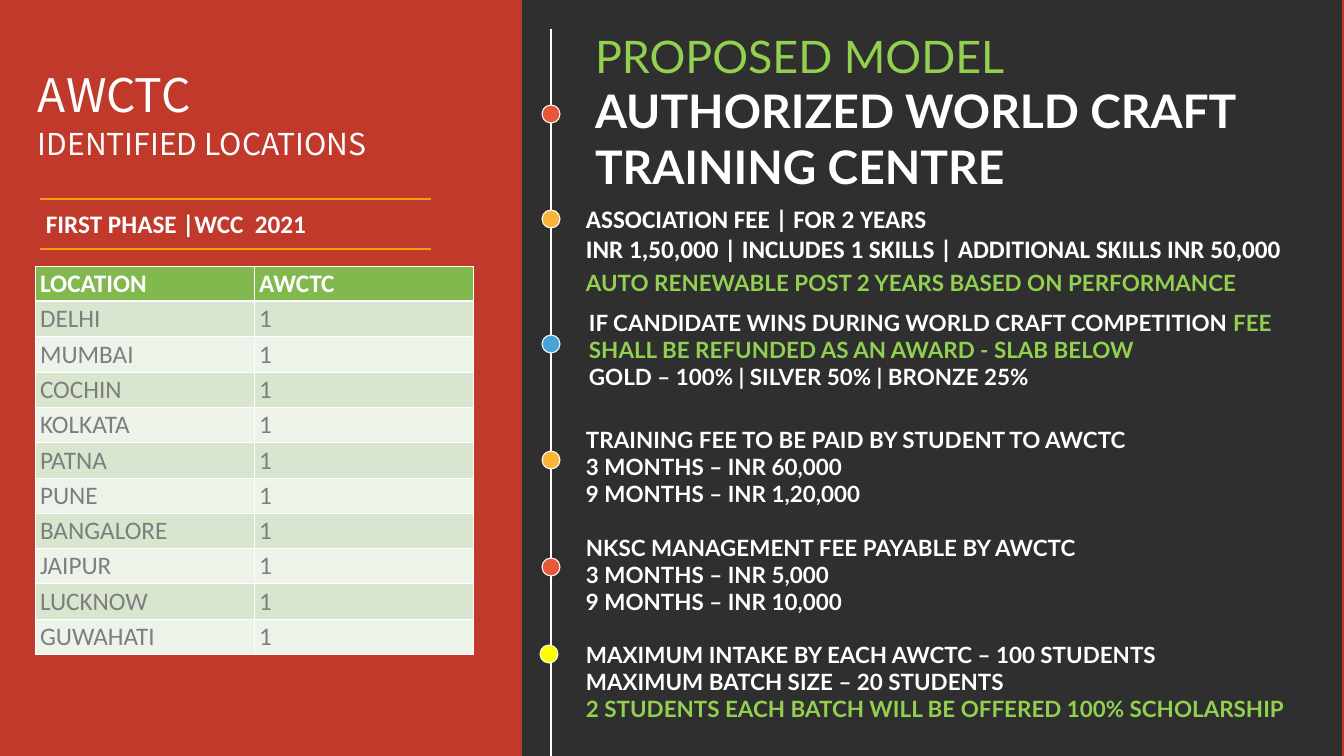
from pptx import Presentation
from pptx.dml.color import RGBColor
from pptx.enum.shapes import MSO_CONNECTOR, MSO_SHAPE
from pptx.enum.text import MSO_ANCHOR, MSO_AUTO_SIZE, PP_ALIGN
from pptx.oxml.ns import qn
from pptx.util import Pt
from lxml.etree import SubElement

THEME = {
    "dark": "2F2F2F", "red": "C0392B", "white": "FFFFFF", "green": "92D050",
    "gold": "F39C12", "blue": "46A4DB", "coral": "E5583A", "amber": "F9B439",
    "yellow": "FFFF00", "header": "81B94F", "band1": "D8E6D0", "band2": "EDF3E9",
    "grey": "7E7E7E",
    "lato": "Lato", "calibri": "Calibri", "noto": "Noto Sans CJK SC",
    "headline": 66, "model": 64, "subtitle": 43, "label": 36, "body": 32,
    "block_gap": 38.4,
}

# Each paragraph is a list of (text, colour) runs.
MODEL = [("PROPOSED MODEL", "green")]
CENTRE = [("AUTHORIZED WORLD CRAFT TRAINING CENTRE", "white")]
ASSOCIATION = [
    [("ASSOCIATION FEE | FOR 2 YEARS", "white")],
    [("INR 1,50,000 | INCLUDES 1 SKILLS | ADDITIONAL SKILLS INR 50,000", "white")],
]
RENEWAL = [[("AUTO RENEWABLE POST 2 YEARS BASED ON PERFORMANCE", "green")]]
REFUND = [
    [("IF CANDIDATE WINS DURING WORLD CRAFT COMPETITION ", "white"),
     ("FEE SHALL BE REFUNDED AS AN AWARD - SLAB BELOW", "green")],
    [("GOLD – 100% | SILVER 50% | BRONZE 25%", "white")],
]
FEE_BLOCKS = [
    [[("TRAINING FEE TO BE PAID BY STUDENT TO AWCTC", "white")],
     [("3 MONTHS – INR 60,000", "white")],
     [("9 MONTHS – INR 1,20,000", "white")]],
    [[("NKSC MANAGEMENT FEE PAYABLE BY AWCTC", "white")],
     [("3 MONTHS – INR 5,000", "white")],
     [("9 MONTHS – INR 10,000", "white")]],
    [[("MAXIMUM INTAKE BY EACH AWCTC – 100 STUDENTS", "white")],
     [("MAXIMUM BATCH SIZE – 20 STUDENTS", "white")],
     [("2 STUDENTS EACH BATCH WILL BE OFFERED 100% SCHOLARSHIP", "green")]],
]
# box, font, size, bold, paragraphs
TEXTS = [
    ((33, 64, 369, 61), "noto", "headline", False, [[("AWCTC", "white")]]),
    ((33, 123, 369, 41), "noto", "subtitle", False,
     [[("IDENTIFIED LOCATIONS", "white")]]),
    ((41, 206, 375, 36), "calibri", "label", True,
     [[("FIRST PHASE |WCC  2021", "white")]]),
    ((581, 201, 725, 66), "calibri", "label", True, ASSOCIATION),
    ((581, 267, 705, 32), "lato", "body", True, RENEWAL),
    ((584, 307, 702, 87), "lato", "body", True, REFUND),
]
FEES_BOX = (581, 424, 763, 303)
TITLE_BOX = (581, 22, 702, 180)
PANELS = [((0, 0, 1344, 756), "dark"), ((0, 0, 522, 756), "red"),
          ((1342, 0, 2, 756), "red")]
LINES = [((40, 199, 431, 199), "gold", 2), ((40, 249, 431, 249), "gold", 2),
         ((551, 29, 551, 756), "white", 1.5)]
DOT = 18
DOTS = [(551, 114, "coral"), (551, 219, "amber"), (551, 344, "blue"),
        (551, 460, "amber"), (551, 567, "coral"), (549, 654, "yellow")]
HEADER = ["LOCATION", "AWCTC"]
LOCATIONS = ["DELHI", "MUMBAI", "COCHIN", "KOLKATA", "PATNA", "PUNE",
             "BANGALORE", "JAIPUR", "LUCKNOW", "GUWAHATI"]
TABLE_AT, COL_W, ROW_H = (35, 266), 219, 35


def px(*values):
    return [round(v * 914400 / 50.4) for v in values]


def rgb(name):
    return RGBColor.from_string(THEME[name])


def add_runs(p, runs, font, size, bold):
    for text, colour in runs:
        r = p.add_run()
        r.text = text
        r.font.name = THEME[font]
        r.font.size = Pt(THEME[size])
        r.font.bold = bold
        r.font.color.rgb = rgb(colour)


def add_text(s, box, font, size, bold, paragraphs):
    tf = s.shapes.add_textbox(*px(*box)).text_frame
    tf.word_wrap = True
    for i, runs in enumerate(paragraphs):
        p = tf.paragraphs[0] if i == 0 else tf.add_paragraph()
        add_runs(p, runs, font, size, bold)
    return tf


def add_filled(s, kind, box, colour, outline=None):
    sp = s.shapes.add_shape(kind, *px(*box))
    sp.shadow.inherit = False
    sp.fill.solid()
    sp.fill.fore_color.rgb = rgb(colour)
    if outline:
        sp.line.color.rgb = rgb(outline)
        sp.line.width = Pt(1.5)
    else:
        sp.line.fill.background()


def add_line(s, ends, colour, width):
    line = s.shapes.add_connector(MSO_CONNECTOR.STRAIGHT, *px(*ends))
    line.line.color.rgb = rgb(colour)
    line.line.width = Pt(width)
    SubElement(line.element.spPr, qn("a:effectLst"))


def add_title(s):
    title = s.shapes.title
    title.left, title.top, title.width, title.height = px(*TITLE_BOX)
    s.shapes.element.append(title.element)  # in front of the panels
    tf = title.text_frame
    tf.word_wrap = True
    tf.auto_size = MSO_AUTO_SIZE.NONE
    tf.vertical_anchor = MSO_ANCHOR.TOP
    tf.margin_left, tf.margin_top, tf.margin_right, tf.margin_bottom = px(14, 7, 14, 7)
    add_runs(tf.paragraphs[0], MODEL, "lato", "model", False)
    add_runs(tf.add_paragraph(), CENTRE, "lato", "headline", True)
    for p in tf.paragraphs:
        p.alignment = PP_ALIGN.LEFT


def set_borders(cell, bottom):
    tc_pr = cell._tc.get_or_add_tcPr()
    for side, width in (("L", 1), ("R", 1), ("T", 1), ("B", bottom)):
        ln = SubElement(tc_pr, qn("a:ln" + side), w=str(Pt(width)))
        fill = SubElement(ln, qn("a:solidFill"))
        SubElement(fill, qn("a:srgbClr"), val=THEME["white"])


def add_locations(s):
    rows = [HEADER] + [[name, "1"] for name in LOCATIONS]
    size = (COL_W * len(HEADER), ROW_H * len(rows))
    table = s.shapes.add_table(len(rows), len(HEADER), *px(*TABLE_AT, *size)).table
    for i, row in enumerate(rows):
        head = i == 0
        fill = "header" if head else ("band1" if i % 2 else "band2")
        for j, text in enumerate(row):
            cell = table.cell(i, j)
            set_borders(cell, 3 if head else 1)
            cell.fill.solid()
            cell.fill.fore_color.rgb = rgb(fill)
            add_runs(cell.text_frame.paragraphs[0],
                     [(text, "white" if head else "grey")], "calibri", "label", head)


def main():
    prs = Presentation()
    prs.slide_width, prs.slide_height = px(1344, 756)
    s = prs.slides.add_slide(prs.slide_layouts[5])
    for box, colour in PANELS:
        add_filled(s, MSO_SHAPE.RECTANGLE, box, colour)
    add_title(s)
    for line in LINES:
        add_line(s, *line)
    for x, y, colour in DOTS:
        box = (x - DOT / 2, y - DOT / 2, DOT, DOT)
        add_filled(s, MSO_SHAPE.OVAL, box, colour, "white")
    for text in TEXTS:
        add_text(s, *text)
    fees = add_text(s, FEES_BOX, "lato", "body", True, sum(FEE_BLOCKS, []))
    start = 0
    for block in FEE_BLOCKS[:-1]:
        start += len(block)
        fees.paragraphs[start].space_before = Pt(THEME["block_gap"])
    add_locations(s)
    prs.save("out.pptx")


if __name__ == "__main__":
    main()
